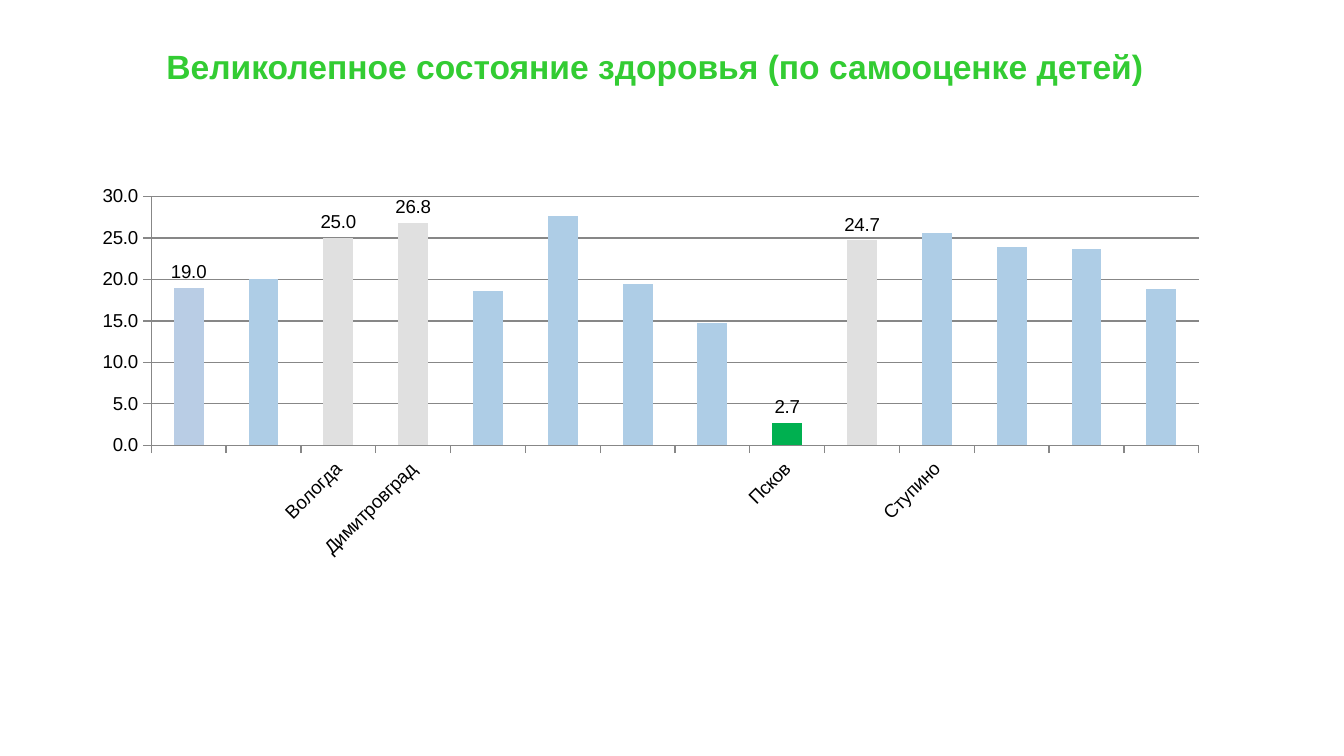
from typing import NamedTuple, Optional

from lxml import etree
from pptx import Presentation
from pptx.chart.data import CategoryChartData
from pptx.dml.color import RGBColor
from pptx.enum.chart import (
    XL_CHART_TYPE as ChartType,
    XL_LABEL_POSITION as LabelPosition,
    XL_TICK_LABEL_POSITION as TickLabels,
    XL_TICK_MARK as TickMark,
)
from pptx.oxml.ns import qn
from pptx.util import Inches, Pt

COLORS = {
    "title": "33CC33",
    "text": "000000",
    "axis": "878787",
    "bar": "AECDE6",
    "first": "B9CDE5",
    "city": "E0E0E0",
    "lowest": "00B050",
}
FONT = "Arial"


class Bar(NamedTuple):
    value: float
    city: str = ""
    highlight: Optional[str] = None


BARS = [
    Bar(19.0, highlight="first"),
    Bar(20.1),
    Bar(25.0, "Вологда", "city"),
    Bar(26.8, "Димитровград", "city"),
    Bar(18.6),
    Bar(27.6),
    Bar(19.4),
    Bar(14.7),
    Bar(2.7, "Псков", "lowest"),
    Bar(24.7, highlight="city"),
    Bar(25.6, "Ступино"),
    Bar(23.9),
    Bar(23.7),
    Bar(18.8),
]


def rgb(name: str) -> RGBColor:
    return RGBColor.from_string(COLORS[name])


def style_font(font, size: float, color: str, bold: bool = False) -> None:
    font.name, font.size, font.bold = FONT, Pt(size), bold
    font.color.rgb = rgb(color)


def style_line(line) -> None:
    line.color.rgb = rgb("axis")
    line.width = Pt(0.75)


def set_plot_layout(chart, x: float, y: float, w: float, h: float) -> None:
    """Fix the inner plot area, in fractions of the chart frame."""
    plot_area = chart._chartSpace.chart.plotArea
    for old in plot_area.findall(qn("c:layout")):
        plot_area.remove(old)
    layout = etree.Element(qn("c:layout"))
    manual = etree.SubElement(layout, qn("c:manualLayout"))
    settings = {"layoutTarget": "inner", "xMode": "edge", "yMode": "edge",
                "x": x, "y": y, "w": w, "h": h}
    for tag, value in settings.items():
        etree.SubElement(manual, qn(f"c:{tag}")).set("val", str(value))
    plot_area.insert(0, layout)


def add_title(slide) -> None:
    box = slide.shapes.add_textbox(Inches(1.14), Inches(0.29), Inches(7.55), Inches(0.4))
    box.text_frame.word_wrap = False
    title = box.text_frame.paragraphs[0]
    title.text = "Великолепное состояние здоровья (по самооценке детей)"
    style_font(title.font, 18, "title", bold=True)


def style_axes(chart) -> None:
    cities, scale = chart.category_axis, chart.value_axis
    for axis in (cities, scale):
        axis.major_tick_mark = TickMark.OUTSIDE
        axis.minor_tick_mark = TickMark.NONE
        style_line(axis.format.line)
        style_font(axis.tick_labels.font, 10, "text")
    cities.tick_label_position = TickLabels.LOW
    cities._element.find(qn("c:txPr")).find(qn("a:bodyPr")).set("rot", "-2700000")
    scale.minimum_scale, scale.maximum_scale, scale.major_unit = 0, 30, 5
    scale.tick_labels.number_format = "0.0"
    scale.tick_labels.number_format_is_linked = False
    scale.has_major_gridlines = True
    style_line(scale.major_gridlines.format.line)


def add_health_chart(slide, bars: list[Bar]) -> None:
    data = CategoryChartData(number_format="0.0")
    data.categories = [bar.city for bar in bars]
    data.add_series("Series 1", [bar.value for bar in bars])
    chart = slide.shapes.add_chart(
        ChartType.COLUMN_CLUSTERED,
        Inches(0.59), Inches(1.32), Inches(8.5), Inches(3.39), data,
    ).chart
    chart.has_legend = chart.has_title = False
    style_font(chart.font, 10, "text")
    set_plot_layout(chart, 0.063, 0.042, 0.917, 0.546)
    style_axes(chart)

    plot = chart.plots[0]
    plot.gap_width = 150
    plot.vary_by_categories = False
    series = plot.series[0]
    series.format.fill.solid()
    series.format.fill.fore_color.rgb = rgb("bar")
    for index, bar in enumerate(bars):
        if bar.highlight:
            point = series.points[index]
            point.format.fill.solid()
            point.format.fill.fore_color.rgb = rgb(bar.highlight)
            style_font(point.data_label.font, 10, "text")
            point.data_label.position = LabelPosition.OUTSIDE_END


def main() -> None:
    deck = Presentation()
    deck.slide_width = Inches(10)
    deck.slide_height = deck.slide_width * 9 // 16
    slide = deck.slides.add_slide(deck.slide_layouts[6])
    add_title(slide)
    add_health_chart(slide, BARS)
    deck.save("out.pptx")


if __name__ == "__main__":
    main()
